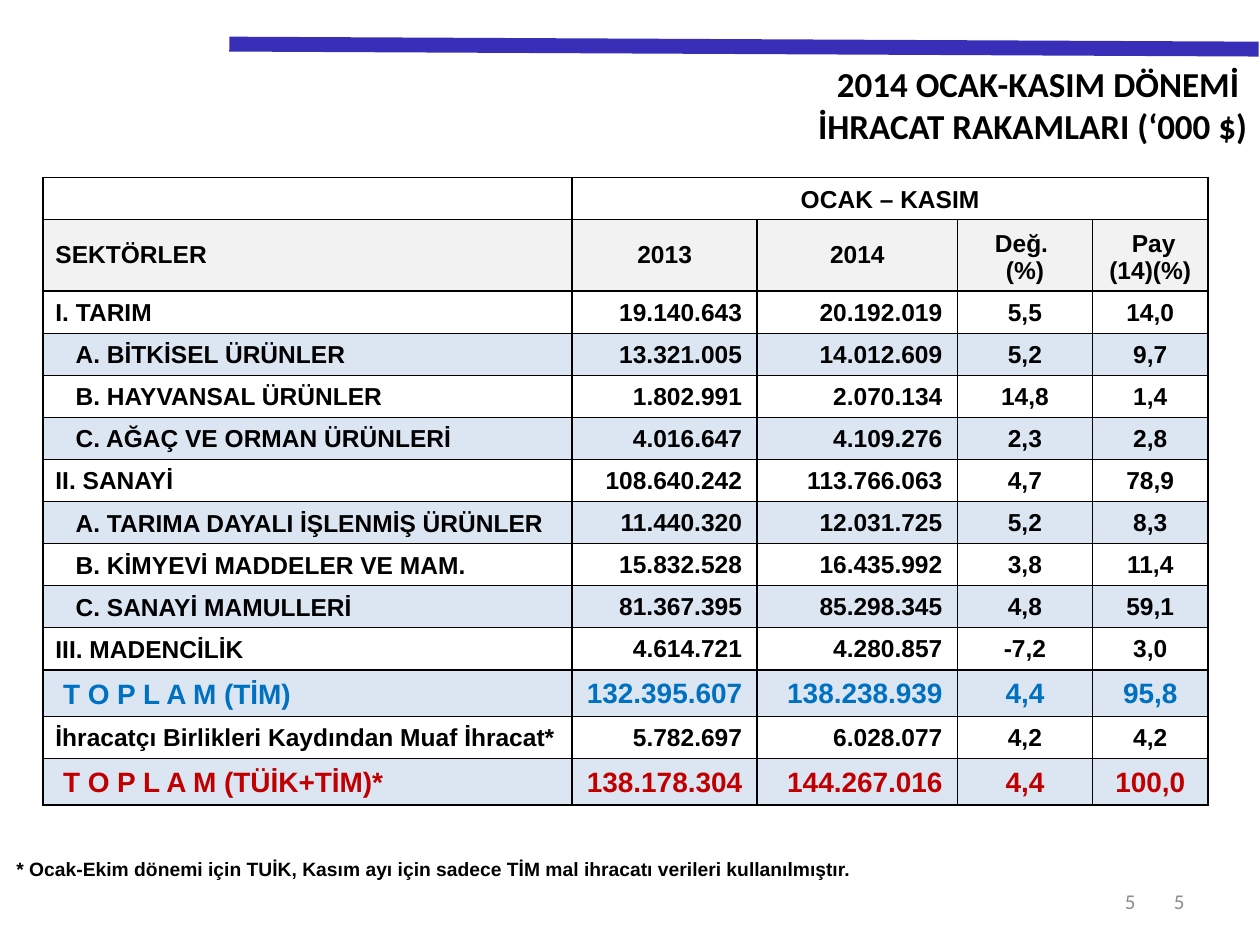
from dataclasses import dataclass

from lxml.etree import SubElement
from pptx import Presentation
from pptx.dml.color import RGBColor
from pptx.enum.shapes import MSO_CONNECTOR as Connector
from pptx.enum.text import MSO_ANCHOR as Anchor, PP_ALIGN as Align
from pptx.oxml.ns import qn
from pptx.util import Inches, Pt


@dataclass(frozen=True)
class Theme:
    """Colours, fonts and type sizes of the slide."""
    ink: str = "000000"
    bar: str = "382EB8"
    muted: str = "8C8C8C"
    header: str = "F2F2F2"
    band: str = "DCE6F2"
    blue: str = "0070C0"
    red: str = "C00000"
    body_font: str = "Arial"
    title_font: str = "Calibri"
    title: int = 20
    total: int = 16
    body: int = 14
    number: int = 12
    note: int = 11


THEME = Theme()
LABEL_INSETS = (0.1, 0.05, 0.1, 0.05)
AMOUNT_INSETS = (0.01, 0.01, 0.12, 0)
TIGHT_INSETS = (0.01, 0.01, 0.01, 0)
COLUMN_WIDTHS = (4.2, 1.47, 1.59, 1.07, 0.92)
ROW_HEIGHT, HEADER_HEIGHT, TOTAL_HEIGHT = 1 / 3, 0.56, 0.37
SUB_INDENT, TOTAL_INDENT = 0.16, 0.06
HEADERS = ("SEKTÖRLER", "2013", "2014", "Değ. \n(%)", " Pay\n(14)(%)")
SECTORS = (
    ("I. TARIM", "19.140.643", "20.192.019", "5,5", "14,0"),
    ("A. BİTKİSEL ÜRÜNLER", "13.321.005", "14.012.609", "5,2", "9,7"),
    ("B. HAYVANSAL ÜRÜNLER", "1.802.991", "2.070.134", "14,8", "1,4"),
    ("C. AĞAÇ VE ORMAN ÜRÜNLERİ", "4.016.647", "4.109.276", "2,3", "2,8"),
    ("II. SANAYİ", "108.640.242", "113.766.063", "4,7", "78,9"),
    ("A. TARIMA DAYALI İŞLENMİŞ ÜRÜNLER", "11.440.320", "12.031.725", "5,2", "8,3"),
    ("B. KİMYEVİ MADDELER VE MAM.", "15.832.528", "16.435.992", "3,8", "11,4"),
    ("C. SANAYİ MAMULLERİ", "81.367.395", "85.298.345", "4,8", "59,1"),
    ("III. MADENCİLİK", "4.614.721", "4.280.857", "-7,2", "3,0"),
    ("T O P L A M (TİM)", "132.395.607", "138.238.939", "4,4", "95,8"),
    ("İhracatçı Birlikleri Kaydından Muaf İhracat*", "5.782.697", "6.028.077", "4,2", "4,2"),
    ("T O P L A M (TÜİK+TİM)*", "138.178.304", "144.267.016", "4,4", "100,0"),
)
TOTAL_COLORS = {"T O P L A M (TİM)": THEME.blue, "T O P L A M (TÜİK+TİM)*": THEME.red}


def write(frame, text, size=THEME.body, font=THEME.body_font, color=THEME.ink,
          bold=True, align=Align.LEFT, indent=0):
    """Write each line of text as a formatted paragraph of the frame."""
    for index, line in enumerate(text.split("\n")):
        paragraph = frame.add_paragraph() if index else frame.paragraphs[0]
        paragraph.alignment = align
        if indent:
            paragraph._p.get_or_add_pPr().set("marL", str(Inches(indent)))
        run = paragraph.add_run()
        run.text = line
        run.font.size, run.font.name, run.font.bold = Pt(size), font, bold
        run.font.color.rgb = RGBColor.from_string(color)


def add_text(slide, box, text, anchor=Anchor.TOP, **style):
    """Place a wrapped text box in the given box."""
    frame = slide.shapes.add_textbox(*map(Inches, box)).text_frame
    frame.word_wrap = True
    frame.vertical_anchor = anchor
    write(frame, text, **style)


def add_plain_table(slide, box, widths, heights):
    """Place a table without banding and size its columns and rows."""
    table = slide.shapes.add_table(len(heights), len(widths), *map(Inches, box)).table
    table.first_row = table.horz_banding = False
    for column, width in zip(table.columns, widths):
        column.width = Inches(width)
    for row, height in zip(table.rows, heights):
        row.height = Inches(height)
    return table


def fill_cell(cell, text="", insets=TIGHT_INSETS, anchor=Anchor.MIDDLE,
              fill=None, border=THEME.ink, **style):
    """Give a cell its borders, fill, insets and text."""
    properties = cell._tc.get_or_add_tcPr()
    for side in ("lnL", "lnR", "lnT", "lnB"):
        line = SubElement(properties, qn(f"a:{side}"), w=str(Pt(1)))
        if border:
            solid = SubElement(line, qn("a:solidFill"))
            SubElement(solid, qn("a:srgbClr"), val=border)
        else:
            SubElement(line, qn("a:noFill"))
    if fill:
        cell.fill.solid()
        cell.fill.fore_color.rgb = RGBColor.from_string(fill)
    else:
        cell.fill.background()
    cell.margin_left, cell.margin_top, cell.margin_right, cell.margin_bottom = map(Inches, insets)
    cell.vertical_anchor = anchor
    if text:
        write(cell.text_frame, text, **style)


def add_top_bar(slide, start, end):
    """Draw the thick bar above the title."""
    bar = slide.shapes.add_connector(Connector.STRAIGHT, *map(Inches, start + end))
    bar.line.width = Pt(8.5)
    bar.line.color.rgb = RGBColor.from_string(THEME.bar)
    SubElement(bar._element.spPr, qn("a:effectLst"))


def add_export_table(slide, box):
    """Build the table of exports by sector."""
    heights = [ROW_HEIGHT, HEADER_HEIGHT] + [
        TOTAL_HEIGHT if sector[0] in TOTAL_COLORS else ROW_HEIGHT for sector in SECTORS]
    table = add_plain_table(slide, box, COLUMN_WIDTHS, heights)
    for column, header in enumerate(HEADERS):
        period = "OCAK – KASIM" if column == 1 else ""
        fill_cell(table.cell(0, column), period, anchor=Anchor.BOTTOM, align=Align.CENTER,
                  insets=LABEL_INSETS if period else TIGHT_INSETS)
        fill_cell(table.cell(1, column), header, LABEL_INSETS, fill=THEME.header,
                  anchor=Anchor.BOTTOM if column > 2 else Anchor.MIDDLE,
                  align=Align.CENTER if column else Align.LEFT)
    table.cell(0, 1).merge(table.cell(0, 4))

    for index, (sector, *figures) in enumerate(SECTORS):
        row = index + 2
        is_total = sector in TOTAL_COLORS
        is_sub = sector[:2] in ("A.", "B.", "C.")
        look = dict(fill=THEME.band if index % 2 else None,
                    color=TOTAL_COLORS.get(sector, THEME.ink),
                    size=THEME.total if is_total else THEME.body)
        fill_cell(table.cell(row, 0), sector, LABEL_INSETS, Anchor.BOTTOM,
                  indent=TOTAL_INDENT if is_total else SUB_INDENT if is_sub else 0, **look)
        for column, figure in enumerate(figures, 1):
            is_amount = column < 3
            fill_cell(table.cell(row, column), figure,
                      AMOUNT_INSETS if is_amount else TIGHT_INSETS,
                      align=Align.RIGHT if is_amount else Align.CENTER, **look)


def add_footnote(slide, box):
    """Build the one-cell footnote table."""
    table = add_plain_table(slide, box, box[2:3], box[3:])
    fill_cell(table.cell(0, 0), "* Ocak-Ekim dönemi için TUİK, Kasım ayı için sadece TİM "
              "mal ihracatı verileri kullanılmıştır.", border=None, size=THEME.note)


def add_page_number(slide, box):
    """Place a right-aligned page number."""
    add_text(slide, box, "5", Anchor.MIDDLE, size=THEME.number, font=THEME.title_font,
             color=THEME.muted, bold=False, align=Align.RIGHT)


def main():
    """Build and save the slide."""
    deck = Presentation()
    deck.slide_width, deck.slide_height = Inches(10), Inches(7.5)
    slide = deck.slides.add_slide(deck.slide_layouts[6])
    add_top_bar(slide, (1.82, 0.35), (9.99, 0.39))
    add_text(slide, (1.06, 0.45, 8.94, 0.77),
             "2014 OCAK-KASIM DÖNEMİ \nİHRACAT RAKAMLARI (‘000 $)",
             size=THEME.title, font=THEME.title_font, align=Align.RIGHT)
    add_export_table(slide, (0.34, 1.41, 9.25, 4.97))
    add_footnote(slide, (0.12, 6.74, 7.4, 0.31))
    for box in ((7.17, 6.95, 2.33, 0.4), (7.01, 6.95, 2.1, 0.4)):
        add_page_number(slide, box)
    deck.save("out.pptx")


if __name__ == "__main__":
    main()
